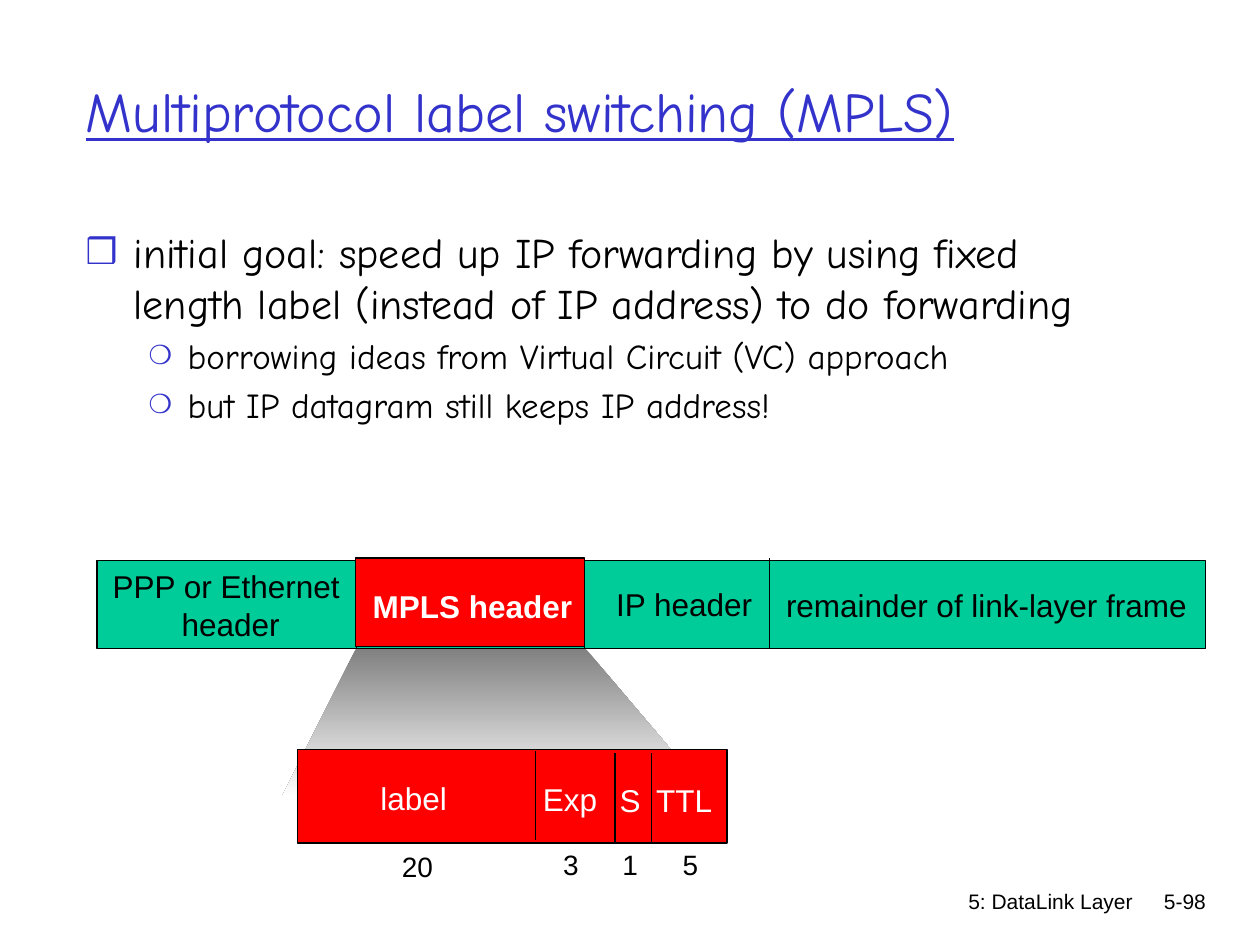
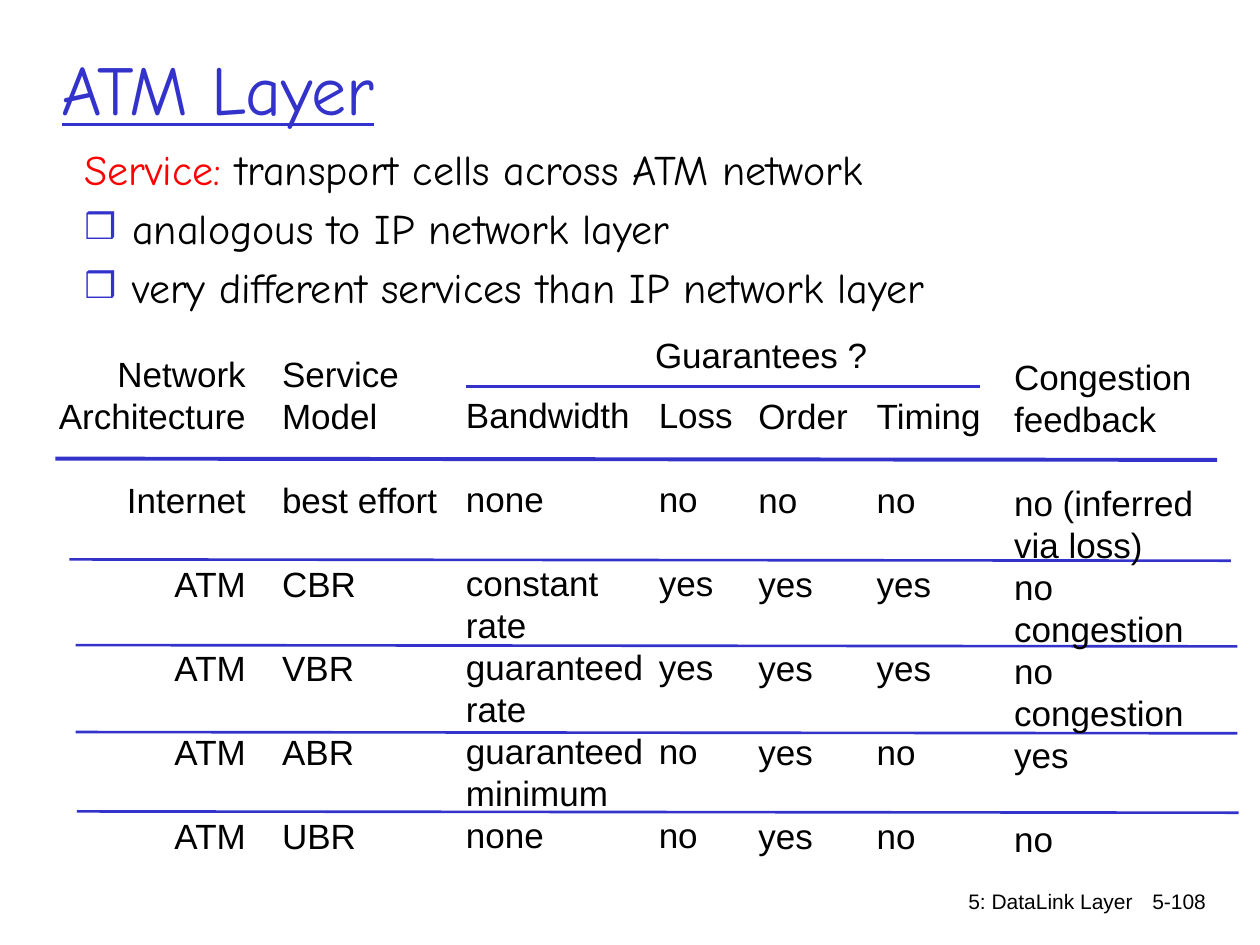
from dataclasses import dataclass
from typing import Optional

from lxml import etree
from pptx import Presentation
from pptx.dml.color import RGBColor
from pptx.enum import shapes, text
from pptx.oxml import ns
from pptx.util import Inches, Pt

BLACK = RGBColor(0x00, 0x00, 0x00)
WHITE = RGBColor(0xFF, 0xFF, 0xFF)
GRAY = RGBColor(0x80, 0x80, 0x80)
BLUE = RGBColor(0x33, 0x33, 0xCC)
RED = RGBColor(0xFF, 0x00, 0x00)
GREEN = RGBColor(0x00, 0xCC, 0x99)

LABEL_FONT = "Arial"
HEADING_FONT = "Comic Neue"
LINE_HEIGHT = 1.2
LEFT, CENTER, RIGHT = text.PP_ALIGN.LEFT, text.PP_ALIGN.CENTER, text.PP_ALIGN.RIGHT


@dataclass(frozen=True)
class Label:
    """Lines are parted by "|"; an empty line becomes space before the next one."""
    words: str
    left: float
    top: float
    width: float
    size: int = 18
    color: RGBColor = BLACK
    align: text.PP_ALIGN = LEFT
    bold: bool = False
    fill: Optional[RGBColor] = None


@dataclass(frozen=True)
class Rule:
    x1: float
    y1: float
    x2: float
    y2: float
    color: RGBColor = BLACK
    weight: float = 0.75


@dataclass(frozen=True)
class Bar:
    left: float
    top: float
    width: float
    height: float
    color: RGBColor


@dataclass(frozen=True)
class Level:
    size: int
    margin: float
    hang: float
    bullet: str
    bullet_percent: int


@dataclass(frozen=True)
class Item:
    words: str
    level: int = 0
    lead: str = ""


LEVELS = (Level(24, 0.38, 0.38, "❒", 85), Level(20, 0.81, 0.31, "❍", 75))


def add_span(para, words: str, font: str, size: int, color: RGBColor, bold: bool = False):
    span = para.add_run()
    span.text = words
    span.font.name = font
    span.font.size = Pt(size)
    span.font.bold = bold
    span.font.color.rgb = color
    return span


def place(box, left: float, top: float, width: float, height: float) -> None:
    box.left, box.top = Inches(left), Inches(top)
    box.width, box.height = Inches(width), Inches(height)


def next_para(frame, first: bool, size: int):
    para = frame.paragraphs[0] if first else frame.add_paragraph()
    para.line_spacing = Pt(LINE_HEIGHT * size)
    return para


def add_label(page, label: Label) -> None:
    lines = label.words.split("|")
    height = len(lines) * LINE_HEIGHT * label.size / 72 + 0.1
    box = page.shapes.add_textbox(Inches(label.left), Inches(label.top),
                                  Inches(label.width), Inches(height))
    if label.fill is not None:
        box.fill.solid()
        box.fill.fore_color.rgb = label.fill
    frame = box.text_frame
    frame.word_wrap = False
    frame.auto_size = text.MSO_AUTO_SIZE.SHAPE_TO_FIT_TEXT
    gap = 0
    for index, line in enumerate(lines):
        if not line:
            gap += 1
            continue
        para = next_para(frame, index == 0, label.size)
        para.alignment = label.align
        para.space_before = Pt(gap * LINE_HEIGHT * label.size)
        add_span(para, line, LABEL_FONT, label.size, label.color, label.bold)
        gap = 0


def add_rule(page, rule: Rule) -> None:
    line = page.shapes.add_connector(shapes.MSO_CONNECTOR.STRAIGHT, Inches(rule.x1),
                                     Inches(rule.y1), Inches(rule.x2), Inches(rule.y2))
    line.line.color.rgb = rule.color
    line.line.width = Pt(rule.weight)
    etree.SubElement(line._element.spPr, ns.qn("a:effectLst"))


def add_bar(page, bar: Bar) -> None:
    box = page.shapes.add_shape(shapes.MSO_SHAPE.RECTANGLE, Inches(bar.left),
                                Inches(bar.top), Inches(bar.width), Inches(bar.height))
    box.shadow.inherit = False
    box.fill.solid()
    box.fill.fore_color.rgb = bar.color
    box.line.color.rgb = BLACK
    box.line.width = Pt(0.75)


def add_zoom_cone(page) -> None:
    """Shaded outline that widens from the MPLS header to its fields."""
    corners = [(2.83, 5.14), (2.24, 6.32), (5.64, 6.32), (4.64, 5.14)]
    points = [(Inches(x), Inches(y)) for x, y in corners]
    builder = page.shapes.build_freeform(*points[0])
    builder.add_line_segments(points[1:], close=True)
    cone = builder.convert_to_shape()
    cone.shadow.inherit = False
    cone.line.fill.background()
    cone.fill.gradient()
    cone.fill.gradient_angle = 270
    for stop, color, position in zip(cone.fill.gradient_stops, (GRAY, WHITE), (0, 1)):
        stop.color.rgb = color
        stop.position = position


def set_bullet(para, level: Level, shown: bool) -> None:
    props = para._p.get_or_add_pPr()
    props.set("marL", str(Inches(level.margin)))
    props.set("indent", str(-Inches(level.hang)))
    if not shown:
        etree.SubElement(props, ns.qn("a:buNone"))
        return
    color = etree.SubElement(props, ns.qn("a:buClr"))
    etree.SubElement(color, ns.qn("a:srgbClr"), val=str(BLUE))
    etree.SubElement(props, ns.qn("a:buSzPct"), val=str(level.bullet_percent * 1000))
    etree.SubElement(props, ns.qn("a:buFont"), typeface=LABEL_FONT)
    etree.SubElement(props, ns.qn("a:buChar"), char=level.bullet)


def fill_title(page, words: str, size: int, area: tuple[float, ...]) -> None:
    title = page.shapes.title
    place(title, *area)
    frame = title.text_frame
    frame.auto_size = text.MSO_AUTO_SIZE.NONE
    frame.vertical_anchor = text.MSO_ANCHOR.MIDDLE
    para = next_para(frame, True, size)
    para.alignment = LEFT
    add_span(para, words, HEADING_FONT, size, BLUE).font.underline = True


def fill_body(page, items: list[Item], area: tuple[float, ...]) -> None:
    body = page.placeholders[1]
    place(body, *area)
    frame = body.text_frame
    frame.auto_size = text.MSO_AUTO_SIZE.NONE
    for index, item in enumerate(items):
        level = LEVELS[item.level]
        para = next_para(frame, index == 0, level.size)
        para.level = item.level
        para.space_before = Pt(0.2 * level.size)
        set_bullet(para, level, shown=not item.lead)
        if item.lead:
            add_span(para, item.lead, HEADING_FONT, level.size, RED)
        add_span(para, item.words, HEADING_FONT, level.size, BLACK)


def add_page(deck, number: str):
    page = deck.slides.add_slide(deck.slide_layouts[1])
    add_label(page, Label("5: DataLink Layer", 5.92, 7, 3.17, 12, align=RIGHT))
    add_label(page, Label(number, 8.93, 7, 0.74, 12, align=RIGHT))
    return page


def build_mpls(deck) -> None:
    page = add_page(deck, "5-98")
    fill_title(page, "Multiprotocol label switching (MPLS)", 32, (0.58, 0.25, 8.5, 1.25))
    fill_body(page, [
        Item("initial goal: speed up IP forwarding by using fixed length label "
             "(instead of IP address) to do forwarding"),
        Item("borrowing ideas from Virtual Circuit (VC) approach", 1),
        Item("but IP datagram still keeps IP address!", 1),
    ], (0.58, 1.75, 8.5, 5.08))

    add_zoom_cone(page)
    add_bar(page, Bar(0.77, 4.45, 8.8, 0.7, GREEN))
    for label in (
        Label("PPP or Ethernet |header", 0.79, 4.45, 2.08, align=CENTER),
        Label("IP header", 4.79, 4.59, 1.28, align=CENTER),
        Label("remainder of link-layer frame", 6.14, 4.6, 3.4),
    ):
        add_label(page, label)
    for x in (2.83, 4.64, 6.11):
        add_rule(page, Rule(x, 4.43, x, 5.15))
    add_bar(page, Bar(2.82, 4.43, 1.82, 0.7, RED))
    add_label(page, Label("MPLS header", 2.82, 4.61, 1.86, color=WHITE,
                          align=CENTER, bold=True))

    add_bar(page, Bar(2.36, 5.95, 3.41, 0.74, RED))
    for name, left, top, width in (("label", 2.92, 6.13, 0.73), ("Exp", 4.21, 6.14, 0.63),
                                   ("S", 4.82, 6.15, 0.37), ("TTL", 5.11, 6.15, 0.65)):
        add_label(page, Label(name, left, top, width, color=WHITE, fill=RED))
    for x, top in ((4.25, 5.96), (4.88, 5.98), (5.17, 5.98)):
        add_rule(page, Rule(x, top, x, top + 0.71))
    for bits, left, top, width in (("20", 3.09, 6.69, 0.45), ("3", 4.37, 6.68, 0.32),
                                   ("1", 4.84, 6.68, 0.32), ("5", 5.32, 6.68, 0.32)):
        add_label(page, Label(bits, left, top, width, 16))


def build_atm(deck) -> None:
    page = add_page(deck, "5-108")
    fill_title(page, "ATM Layer", 40, (0.39, 0.22, 8.5, 0.95))
    fill_body(page, [
        Item(" transport cells across ATM network", lead="Service:"),
        Item("analogous to IP network layer"),
        Item("very different services than IP network layer"),
    ], (0.57, 1.09, 8.5, 5.37))

    for column in (
        Label("Network|Architecture||Internet||ATM||ATM||ATM||ATM",
              0.3, 2.75, 1.75, 20, align=RIGHT),
        Label("Service|Model||best effort||CBR||VBR||ABR||UBR", 2.14, 2.75, 1.5, 20),
        Label("Bandwidth||none||constant|rate|guaranteed|rate|guaranteed|minimum|none",
              3.6, 3.07, 1.7, 20),
    ):
        add_label(page, column)
    add_rule(page, Rule(0.44, 3.64, 9.66, 3.65, BLUE, 2.25))
    for left, top in ((0.55, 4.44), (0.6, 5.12), (0.6, 5.81), (0.61, 6.44)):
        add_rule(page, Rule(left, top, left + 9.22, top + 0.01, BLUE, 1.5))
    for column in (
        Label("Loss||no||yes||yes||no||no", 5.13, 3.07, 0.82, 20),
        Label("Order||no||yes||yes||yes||yes", 5.92, 3.08, 0.94, 20),
        Label("Timing||no||yes||yes||no||no", 6.86, 3.08, 1.06, 20),
        Label("Congestion|feedback||no (inferred|via loss)|no|congestion|no|congestion"
              "|yes||no", 7.95, 2.77, 1.65, 20),
        Label("Guarantees ?", 5.1, 2.6, 1.92, 20),
    ):
        add_label(page, column)
    add_rule(page, Rule(3.7, 3.07, 7.78, 3.07, BLUE, 1.5))


def main() -> None:
    deck = Presentation()
    deck.slide_width, deck.slide_height = Inches(10), Inches(7.5)
    build_mpls(deck)
    build_atm(deck)
    deck.save("out.pptx")


if __name__ == "__main__":
    main()
